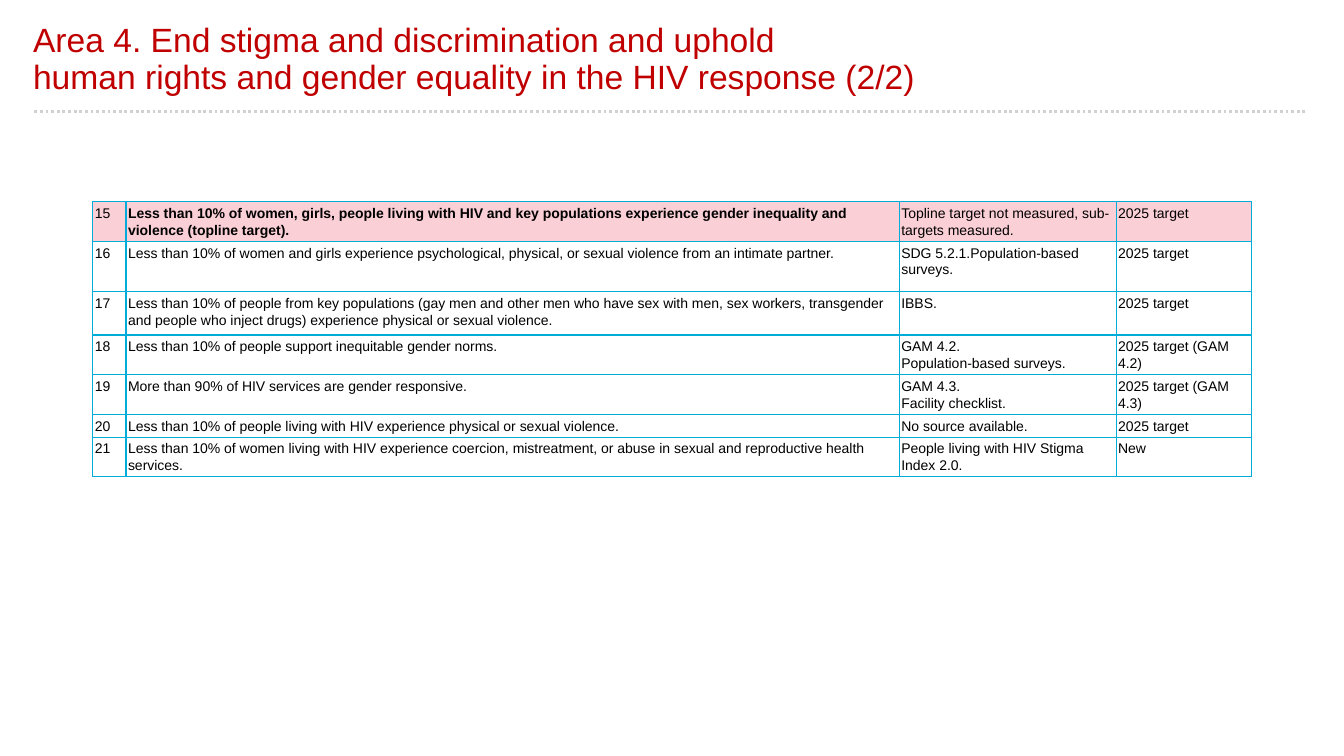
from dataclasses import dataclass

from lxml import etree
from pptx import Presentation
from pptx.dml.color import RGBColor
from pptx.enum.dml import MSO_LINE
from pptx.enum.shapes import MSO_CONNECTOR
from pptx.enum.text import MSO_ANCHOR
from pptx.oxml.ns import qn
from pptx.slide import Slide
from pptx.table import _Cell
from pptx.text.text import TextFrame
from pptx.util import Inches, Pt

STRAIGHT = MSO_CONNECTOR.STRAIGHT
DOTS = MSO_LINE.ROUND_DOT
MIDDLE = MSO_ANCHOR.MIDDLE

RED = RGBColor(0xC0, 0x00, 0x00)
BLACK = RGBColor(0x00, 0x00, 0x00)
GREY = RGBColor(0xD1, 0xD1, 0xD1)
PINK = RGBColor(0xFA, 0xCF, 0xD6)
BLUE = RGBColor(0x01, 0xAD, 0xD8)
FONT = "Arial"

TITLE = ("Area 4. End stigma and discrimination and uphold\v"
         "human rights and gender equality in the HIV response (2/2)")
WIDTHS = (0.33, 7.67, 2.15, 1.34)


@dataclass
class Target:
    height: float
    text: str
    source: str
    status: str = "2025 target"
    topline: bool = False


FIRST = 15
TARGETS = (
    Target(0.34, "Less than 10% of women, girls, people living with HIV and key "
           "populations experience gender inequality and violence (topline target).",
           "Topline target not measured, sub-targets measured.", topline=True),
    Target(0.5, "Less than 10% of women and girls experience psychological, physical, "
           "or sexual violence from an intimate partner.",
           "SDG 5.2.1.Population-based surveys."),
    Target(0.43, "Less than 10% of people from key populations (gay men and other men "
           "who have sex with men, sex workers, transgender and people who inject drugs) "
           "experience physical or sexual violence.", "IBBS."),
    Target(0.34, "Less than 10% of people support inequitable gender norms.",
           "GAM 4.2.\nPopulation-based surveys.", "2025 target (GAM 4.2)"),
    Target(0.34, "More than 90% of HIV services are gender responsive.",
           "GAM 4.3.\nFacility checklist.", "2025 target (GAM 4.3)"),
    Target(0.18, "Less than 10% of people living with HIV experience physical or "
           "sexual violence.", "No source available."),
    Target(0.26, "Less than 10% of women living with HIV experience coercion, "
           "mistreatment, or abuse in sexual and reproductive health services.",
           "People living with HIV Stigma Index 2.0.", "New"),
)


def style(frame: TextFrame, size: float, color: RGBColor,
          spacing: float | Pt, bold: bool = False) -> None:
    for para in frame.paragraphs:
        para.line_spacing = spacing
        font = para.font
        font.name, font.size, font.bold = FONT, Pt(size), bold
        font.color.rgb = color
        for run in para.runs:
            run.font.name, run.font.size, run.font.bold = FONT, Pt(size), bold
            run.font.color.rgb = color


def add_title(slide: Slide) -> None:
    box = slide.shapes.add_textbox(Inches(0.23), Inches(-0.13), Inches(11.5), Inches(1.45))
    frame = box.text_frame
    frame.word_wrap = True
    frame.vertical_anchor = MIDDLE
    frame.paragraphs[0].text = TITLE
    style(frame, 24, RED, 0.9)


def add_rule(slide: Slide) -> None:
    rule = slide.shapes.add_connector(
        STRAIGHT, Inches(0.34), Inches(1.11), Inches(12.95), Inches(1.11))
    rule.line.color.rgb = GREY
    rule.line.width = Pt(2)
    rule.line.dash_style = DOTS
    etree.SubElement(rule._element.spPr, qn("a:effectLst"))


def add_border(cell: _Cell) -> None:
    props = cell._tc.get_or_add_tcPr()
    for spot, side in enumerate(("lnL", "lnR", "lnT", "lnB")):
        line = etree.Element(qn(f"a:{side}"), w=str(Pt(1)))
        fill = etree.SubElement(line, qn("a:solidFill"))
        etree.SubElement(fill, qn("a:srgbClr"), val=str(BLUE))
        props.insert(spot, line)


def fill_cell(cell: _Cell, text: str, topline: bool, bold: bool) -> None:
    cell.margin_left = cell.margin_right = Inches(0.02)
    cell.margin_top = cell.margin_bottom = Inches(0.03)
    cell.text_frame.text = text
    style(cell.text_frame, 10, BLACK, Pt(12), bold)
    if topline:
        cell.fill.solid()
        cell.fill.fore_color.rgb = PINK
    else:
        cell.fill.background()
    add_border(cell)


def add_targets(slide: Slide) -> None:
    table = slide.shapes.add_table(
        len(TARGETS), len(WIDTHS), Inches(0.92), Inches(2),
        Inches(sum(WIDTHS)), Inches(2.69)).table
    table.first_row = table.horz_banding = False
    for col, width in zip(table.columns, WIDTHS):
        col.width = Inches(width)
    for num, (row, target) in enumerate(zip(table.rows, TARGETS), FIRST):
        row.height = Inches(target.height)
        texts = (str(num), target.text, target.source, target.status)
        for cell, text in zip(row.cells, texts):
            bold = target.topline and text == target.text
            fill_cell(cell, text, target.topline, bold)


def main() -> None:
    deck = Presentation()
    deck.slide_width, deck.slide_height = Inches(13.33), Inches(7.5)
    slide = deck.slides.add_slide(deck.slide_layouts[6])
    add_rule(slide)
    add_title(slide)
    add_targets(slide)
    deck.save("out.pptx")


if __name__ == "__main__":
    main()
